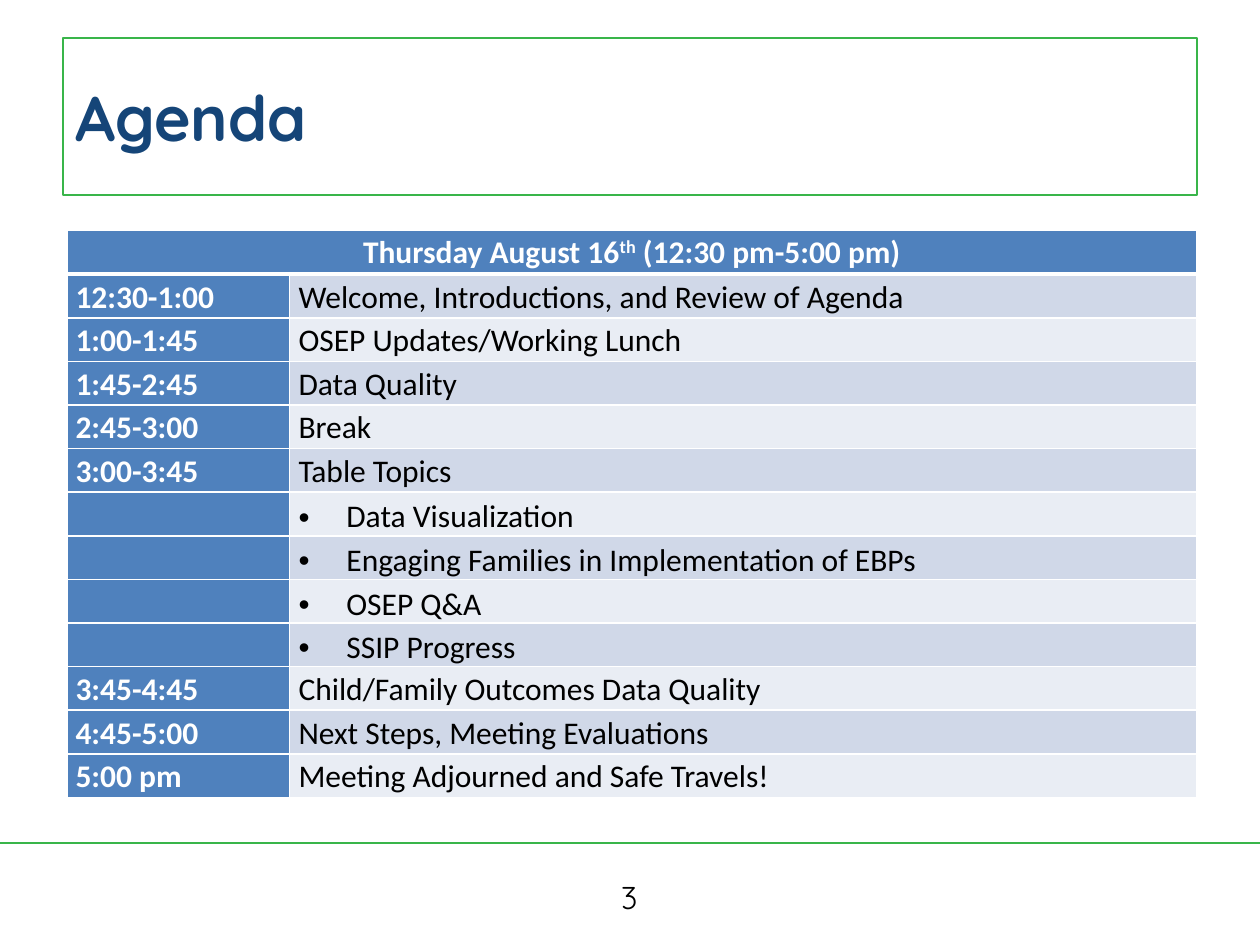
from lxml import etree
from pptx import Presentation
from pptx.dml.color import RGBColor
from pptx.enum.shapes import MSO_CONNECTOR, MSO_SHAPE
from pptx.enum.text import MSO_ANCHOR, PP_ALIGN
from pptx.oxml import parse_xml
from pptx.oxml.ns import nsdecls, qn
from pptx.util import Inches, Pt

GREEN = RGBColor(0x39, 0xB5, 0x4A)
NAVY = RGBColor(0x15, 0x45, 0x78)
BLUE = RGBColor(0x4F, 0x81, 0xBD)
BAND_DARK = RGBColor(0xD0, 0xD8, 0xE8)
BAND_LIGHT = RGBColor(0xE9, 0xED, 0xF4)
WHITE = RGBColor(0xFF, 0xFF, 0xFF)
BLACK = RGBColor(0, 0, 0)

AGENDA = [
    ("12:30-1:00", "Welcome, Introductions, and Review of Agenda"),
    ("1:00-1:45", "OSEP Updates/Working Lunch"),
    ("1:45-2:45", "Data Quality"),
    ("2:45-3:00", "Break"),
    ("3:00-3:45", "Table Topics"),
    ("", "Data Visualization"),
    ("", "Engaging Families in Implementation of EBPs"),
    ("", "OSEP Q&A"),
    ("", "SSIP Progress"),
    ("3:45-4:45", "Child/Family Outcomes Data Quality"),
    ("4:45-5:00", "Next Steps, Meeting Evaluations"),
    ("5:00 pm", "Meeting Adjourned and Safe Travels!"),
]


def write(para, text, font="Calibri", size=18, color=BLACK, bold=False,
          align=PP_ALIGN.LEFT, spacing=None, bullet=False, baseline=0):
    if bullet:
        properties = para._p.get_or_add_pPr()
        properties.set("marL", str(Inches(0.38)))
        properties.set("indent", str(Inches(-0.38)))
        etree.SubElement(properties, qn("a:buFont")).set("typeface", "Arial")
        etree.SubElement(properties, qn("a:buChar")).set("char", "•")
    para.alignment = align
    if spacing:
        para.line_spacing = spacing
    span = para.add_run()
    span.text = text
    span.font.name = font
    span.font.size = Pt(size)
    span.font.bold = bold
    span.font.color.rgb = color
    if baseline:
        span._r.get_or_add_rPr().set("baseline", str(baseline * 1000))


def style_cell(cell, fill, top=1, bottom=1):
    cell.fill.solid()
    cell.fill.fore_color.rgb = fill
    cell.vertical_anchor = MSO_ANCHOR.MIDDLE
    cell.margin_left = cell.margin_right = Inches(0.07)
    cell.margin_top = cell.margin_bottom = 0
    borders = [("L", 1), ("R", 1), ("T", top), ("B", bottom)]
    for index, (side, width) in enumerate(borders):
        cell._tc.get_or_add_tcPr().insert(index, parse_xml(
            f'<a:ln{side} {nsdecls("a")} w="{Pt(width)}"><a:solidFill>'
            f'<a:srgbClr val="{WHITE}"/></a:solidFill></a:ln{side}>'))


deck = Presentation()
deck.slide_width = Inches(10)
deck.slide_height = Inches(7.5)
page = deck.slides.add_slide(deck.slide_layouts[6])

footer_line = page.shapes.add_connector(
    MSO_CONNECTOR.STRAIGHT, Inches(0), Inches(6.69), Inches(10), Inches(6.69))
footer_line.line.color.rgb = GREEN
footer_line.line.width = Pt(1.5)
etree.SubElement(footer_line._element.spPr, qn("a:effectLst"))

title = page.shapes.add_shape(
    MSO_SHAPE.RECTANGLE, Inches(0.5), Inches(0.3), Inches(9), Inches(1.25))
title.shadow.inherit = False
title.fill.background()
title.line.color.rgb = GREEN
title.line.width = Pt(1)
title.text_frame.vertical_anchor = MSO_ANCHOR.MIDDLE
write(title.text_frame.paragraphs[0], "Agenda", font="Quicksand", size=36,
      color=NAVY, bold=True)

number_box = page.shapes.add_textbox(
    Inches(3.83), Inches(6.92), Inches(2.33), Inches(0.4))
number_box.text_frame.word_wrap = True
write(number_box.text_frame.paragraphs[0], "3", font="Quicksand",
      align=PP_ALIGN.CENTER)

table = page.shapes.add_table(
    len(AGENDA) + 1, 2, Inches(0.53), Inches(1.83), Inches(8.97), Inches(4.5)).table
table.columns[0].width = Inches(1.77)
table.columns[1].width = Inches(7.2)

for cell in table.rows[0].cells:
    style_cell(cell, BLUE, bottom=3)
heading = table.cell(0, 0)
heading.merge(table.cell(0, 1))
heading_para = heading.text_frame.paragraphs[0]
for text, baseline in [("Thursday August 16", 0), ("th", 30),
                       (" (12:30 pm-5:00 pm)", 0)]:
    write(heading_para, text, color=WHITE, bold=True, align=PP_ALIGN.CENTER,
          baseline=baseline)

for row, (time, topic) in enumerate(AGENDA, start=1):
    time_cell, topic_cell = table.cell(row, 0), table.cell(row, 1)
    top = 3 if row == 1 else 1
    style_cell(time_cell, BLUE, top=top)
    style_cell(topic_cell, BAND_DARK if row % 2 else BAND_LIGHT, top=top)
    if time:
        write(time_cell.text_frame.paragraphs[0], time, color=WHITE, bold=True,
              spacing=1.07)
    write(topic_cell.text_frame.paragraphs[0], topic, bullet=not time,
          spacing=1.07 if time else 1.15)

deck.save("out.pptx")
